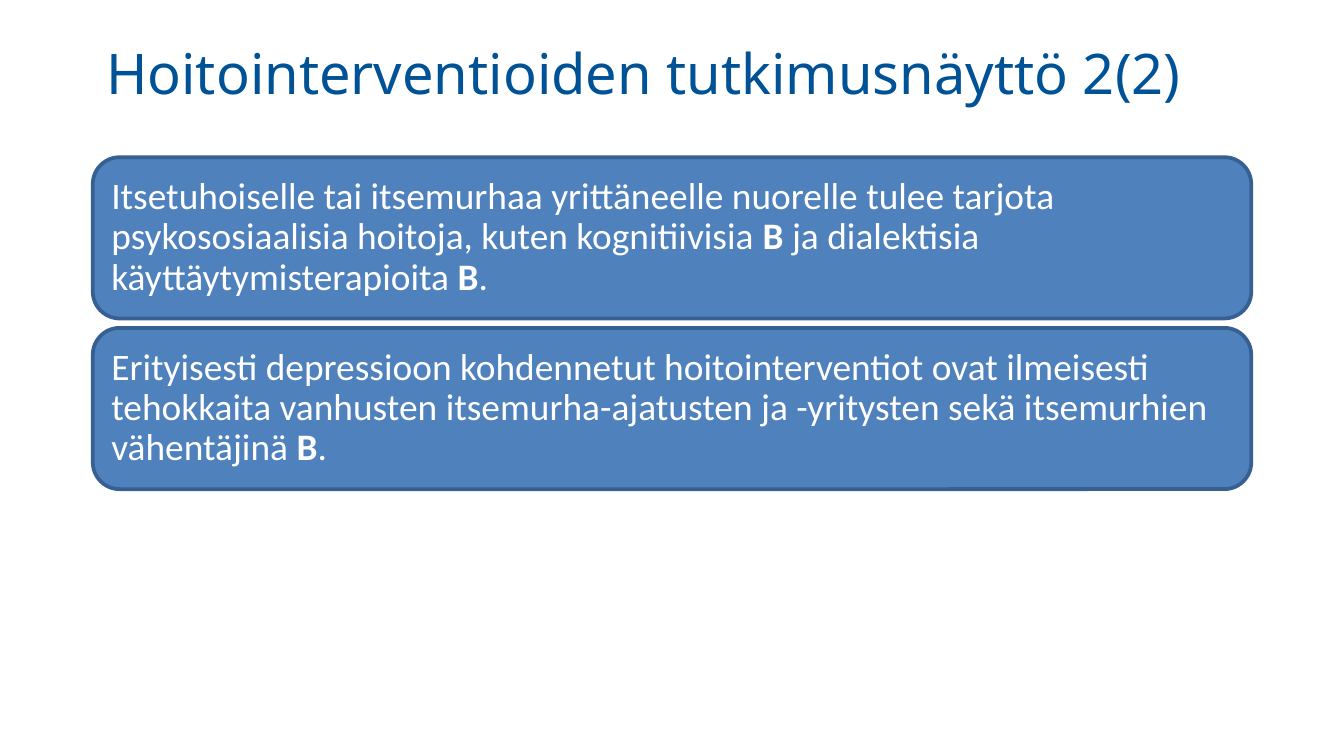
from dataclasses import dataclass

from pptx import Presentation
from pptx.dml.color import RGBColor
from pptx.enum.shapes import MSO_SHAPE
from pptx.enum.text import MSO_ANCHOR, MSO_AUTO_SIZE, PP_ALIGN
from pptx.util import Inches, Pt

TITLE = "Hoitointerventioiden tutkimusnäyttö 2(2)"
GRADE = "B"
STATEMENTS = [
    [
        "Itsetuhoiselle tai itsemurhaa yrittäneelle nuorelle tulee tarjota "
        "psykososiaalisia hoitoja, kuten kognitiivisia ",
        GRADE,
        " ja dialektisia käyttäytymisterapioita ",
        GRADE,
        ".",
    ],
    [
        "Erityisesti depressioon kohdennetut hoitointerventiot ovat ilmeisesti "
        "tehokkaita vanhusten itsemurha-ajatusten ja -yritysten sekä "
        "itsemurhien vähentäjinä ",
        GRADE,
        ".",
    ],
]


@dataclass(frozen=True)
class Theme:
    title_color: RGBColor = RGBColor.from_string("005296")
    fill: RGBColor = RGBColor.from_string("4F81BD")
    line: RGBColor = RGBColor.from_string("376092")
    text: RGBColor = RGBColor.from_string("FFFFFF")
    title_font: str = "Noto Sans"
    body_font: str = "Calibri"
    title_size: int = 30
    body_size: int = 20


THEME = Theme()
WIDTH = 10
HEIGHT = WIDTH * 9 / 16
MARGIN = 0.69
CONTENT_WIDTH = WIDTH - 2 * MARGIN
TITLE_TOP, TITLE_HEIGHT = 0.24, 0.61
CARD_TOP, CARD_HEIGHT, CARD_GAP = 1.17, 1.2, 0.07
CARD_INSET = 0.08


def style(font, name, size, color):
    font.name, font.size = name, Pt(size)
    font.color.rgb = color


def place(shape, top, height):
    shape.left, shape.top = Inches(MARGIN), Inches(top)
    shape.width, shape.height = Inches(CONTENT_WIDTH), Inches(height)


def add_title(page):
    title = page.shapes.title
    place(title, TITLE_TOP, TITLE_HEIGHT)
    frame = title.text_frame
    frame.text = TITLE
    frame.word_wrap = True
    frame.auto_size = MSO_AUTO_SIZE.SHAPE_TO_FIT_TEXT
    frame.vertical_anchor = MSO_ANCHOR.TOP
    para = frame.paragraphs[0]
    para.alignment = PP_ALIGN.LEFT
    style(para.runs[0].font, THEME.title_font, THEME.title_size, THEME.title_color)


def add_card(page, row, spans):
    card = page.shapes.add_shape(MSO_SHAPE.ROUNDED_RECTANGLE, 0, 0, 0, 0)
    place(card, CARD_TOP + row * (CARD_HEIGHT + CARD_GAP), CARD_HEIGHT)
    card.shadow.inherit = False
    card.fill.solid()
    card.fill.fore_color.rgb = THEME.fill
    card.line.color.rgb = THEME.line
    card.line.width = Pt(2)
    frame = card.text_frame
    frame.word_wrap = True
    frame.vertical_anchor = MSO_ANCHOR.MIDDLE
    frame.margin_left = frame.margin_right = Inches(CARD_INSET)
    frame.margin_top = frame.margin_bottom = Inches(CARD_INSET)
    para = frame.paragraphs[0]
    para.alignment = PP_ALIGN.LEFT
    para.line_spacing = 0.9
    for text in spans:
        span = para.add_run()
        span.text = text
        style(span.font, THEME.body_font, THEME.body_size, THEME.text)
        span.font.bold = text == GRADE


def main():
    deck = Presentation()
    deck.slide_width, deck.slide_height = Inches(WIDTH), Inches(HEIGHT)
    page = deck.slides.add_slide(deck.slide_layouts.get_by_name("Title Only"))
    add_title(page)
    for row, spans in enumerate(STATEMENTS):
        add_card(page, row, spans)
    deck.save("out.pptx")


if __name__ == "__main__":
    main()
